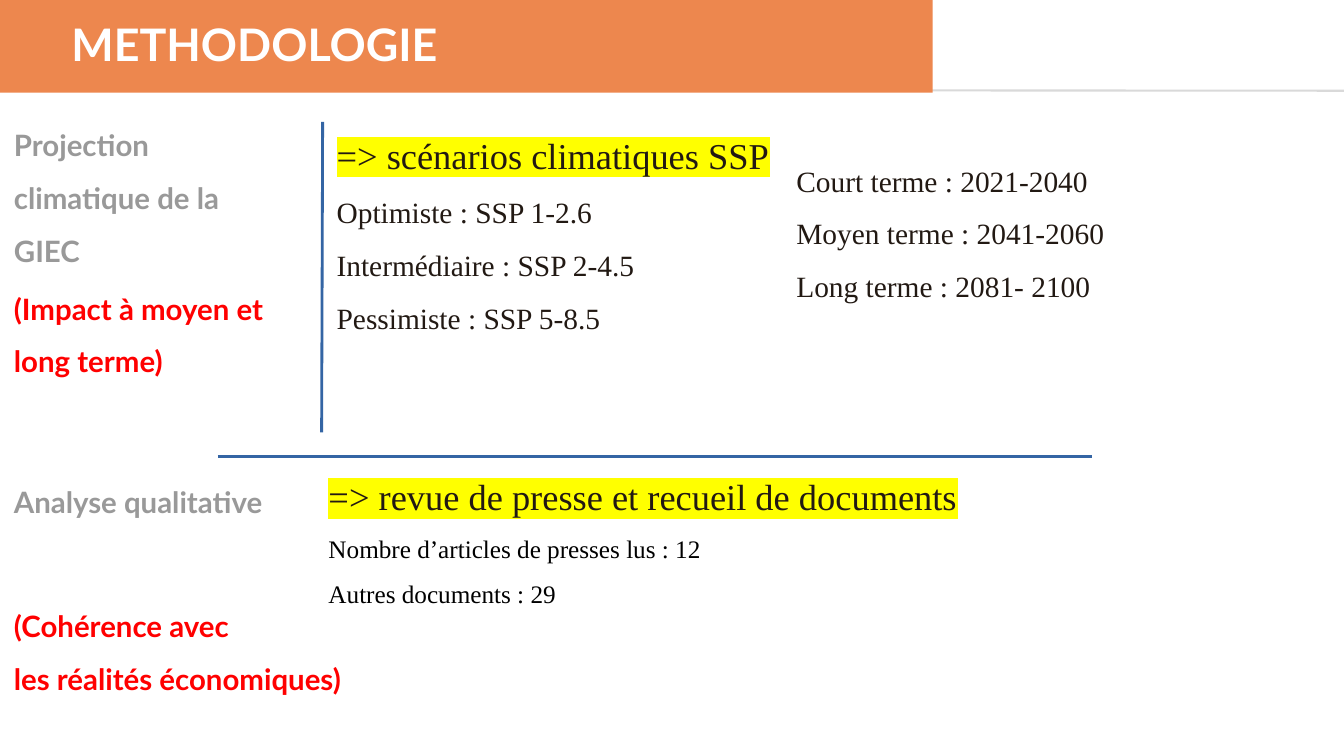
from dataclasses import dataclass

import pptx
import pptx.dml.color
import pptx.enum.shapes
import pptx.enum.text
import pptx.oxml
import pptx.oxml.ns
import pptx.util

Inches = pptx.util.Inches
Pt = pptx.util.Pt
ALIGN = pptx.enum.text.PP_ALIGN

COLORS = {
    "banner": "ED874E",
    "title": "FFFFFF",
    "topic": "999999",
    "purpose": "FF0000",
    "body": "221913",
    "detail": "000000",
    "highlight": "FFFF00",
    "divider": "3465A4",
    "rule": "D9D9D9",
}


@dataclass(frozen=True)
class Style:
    size: float
    color: str
    name: str = "Times New Roman"
    bold: bool = False
    align: ALIGN = ALIGN.JUSTIFY
    spacing: float = 1.5
    highlight: bool = False


@dataclass(frozen=True)
class Line:
    start: tuple[float, float]
    end: tuple[float, float]
    color: str
    width: float = 0


@dataclass(frozen=True)
class Block:
    box: tuple[float, float, float, float]
    paragraphs: list[tuple[str, Style]]


TITLE = Style(32, "title", "Lato", True, ALIGN.LEFT, 1.0)
TOPIC = Style(21, "topic", "Lato", True, ALIGN.LEFT)
PURPOSE = Style(21, "purpose", "Lato", True, ALIGN.LEFT)
METHOD = Style(26, "body", highlight=True)
BODY = Style(21, "body")
DETAIL = Style(18, "detail")

HEADER_RULE = Line((0, 0.89), (13.34, 0.9), "rule", 1.5)
DIVIDERS = [
    Line((3.2, 1.21), (3.19, 4.29), "divider"),
    Line((2.16, 4.53), (10.83, 4.53), "divider"),
]

BLOCKS = [
    Block((0.61, 0.12, 5.49, 0.63), [("METHODOLOGIE", TITLE)]),
    Block((0.04, 1.04, 2.76, 1.67), [("Projection climatique de la GIEC", TOPIC)]),
    Block((0.04, 2.66, 2.76, 1.67), [("(Impact à moyen et long terme)", PURPOSE)]),
    Block((3.24, 1.05, 4.52, 2.82), [
        ("=> scénarios climatiques SSP", METHOD),
        ("Optimiste : SSP 1-2.6", BODY),
        ("Intermédiaire : SSP 2-4.5", BODY),
        ("Pessimiste : SSP 5-8.5", BODY),
    ]),
    Block((7.8, 1.39, 4.52, 1.67), [
        ("Court terme : 2021-2040", BODY),
        ("Moyen terme : 2041-2060", BODY),
        ("Long terme : 2081- 2100", BODY),
    ]),
    Block((0.04, 4.58, 2.76, 1.15), [("Analyse qualitative", TOPIC)]),
    Block((0.04, 5.81, 3.7, 1.67), [
        ("(Cohérence avec", PURPOSE),
        ("les réalités économiques)", PURPOSE),
    ]),
    Block((3.16, 4.44, 7.87, 2.15), [
        ("=> revue de presse et recueil de documents", METHOD),
        ("Nombre d’articles de presses lus : 12", DETAIL),
        ("Autres documents : 29", DETAIL),
    ]),
]


def rgb(color: str) -> pptx.dml.color.RGBColor:
    return pptx.dml.color.RGBColor.from_string(COLORS[color])


def add_line(slide, line: Line) -> None:
    s = slide.shapes.add_connector(
        pptx.enum.shapes.MSO_CONNECTOR.STRAIGHT,
        *(Inches(v) for v in line.start + line.end),
    )
    s.line.color.rgb = rgb(line.color)
    s.line.width = Pt(line.width)
    pptx.oxml.ns.qn("a:effectLst")
    s.element.spPr.append(pptx.oxml.parse_xml(
        f"<a:effectLst {pptx.oxml.ns.nsdecls('a')}/>"))


def add_banner(slide) -> None:
    s = slide.shapes.add_shape(
        pptx.enum.shapes.MSO_SHAPE.RECTANGLE, 0, 0, Inches(9.25), Inches(0.92))
    s.shadow.inherit = False
    s.fill.solid()
    s.fill.fore_color.rgb = rgb("banner")
    s.line.fill.background()


def highlight(r) -> None:
    """Mark the run; the highlight must directly follow the text fill."""
    fill = r.font._element.find(pptx.oxml.ns.qn("a:solidFill"))
    fill.addnext(pptx.oxml.parse_xml(
        f"<a:highlight {pptx.oxml.ns.nsdecls('a')}>"
        f"<a:srgbClr val=\"{COLORS['highlight']}\"/></a:highlight>"))


def add_block(slide, block: Block) -> None:
    tf = slide.shapes.add_textbox(*(Inches(v) for v in block.box)).text_frame
    tf.word_wrap = True
    for i, (text, style) in enumerate(block.paragraphs):
        p = tf.add_paragraph() if i else tf.paragraphs[0]
        p.alignment = style.align
        p.line_spacing = style.spacing
        r = p.add_run()
        r.text = text
        formats = {"size": Pt(style.size), "name": style.name, "bold": style.bold}
        for attribute, value in formats.items():
            setattr(r.font, attribute, value)
        r.font.color.rgb = rgb(style.color)
        if style.highlight:
            highlight(r)


def main() -> None:
    prs = pptx.Presentation()
    prs.slide_width = Inches(13.33)
    prs.slide_height = Inches(7.5)
    slide = prs.slides.add_slide(prs.slide_layouts[6])
    add_line(slide, HEADER_RULE)
    add_banner(slide)
    for line in DIVIDERS:
        add_line(slide, line)
    for block in BLOCKS:
        add_block(slide, block)
    prs.save("out.pptx")


if __name__ == "__main__":
    main()
